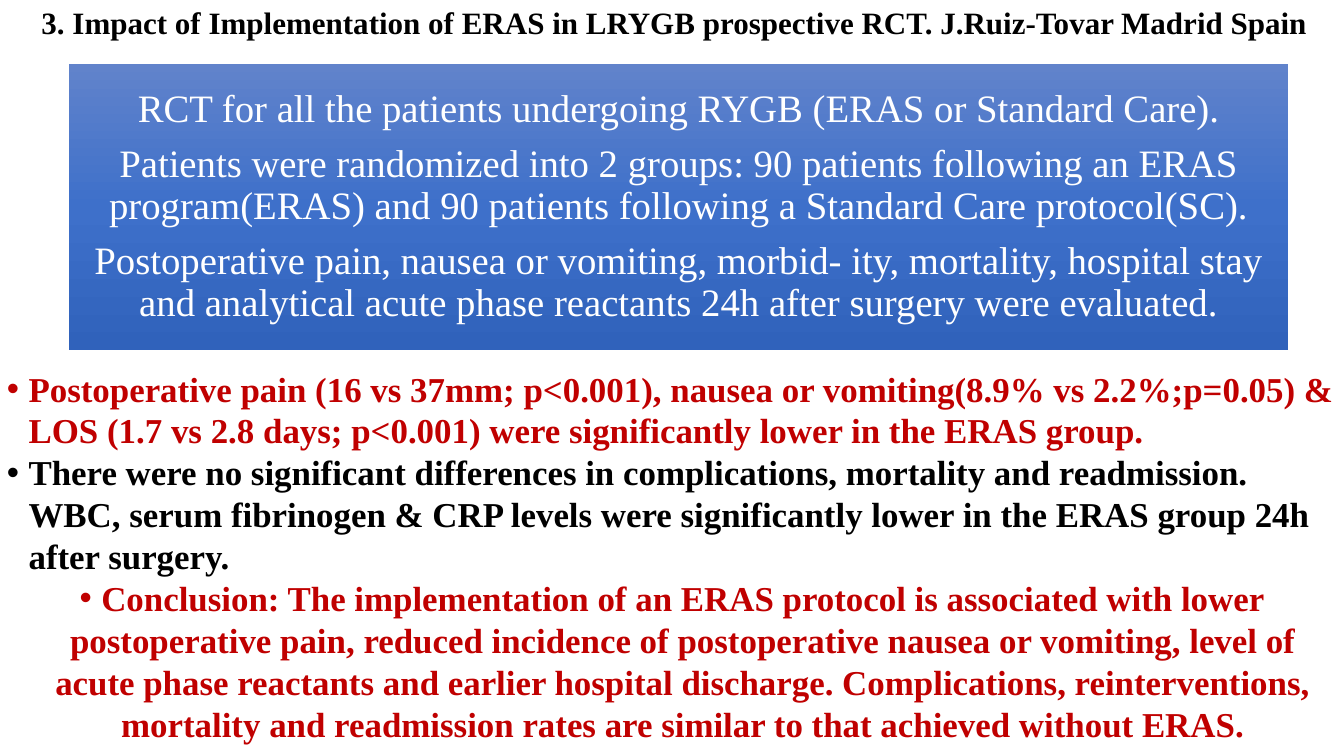
from copy import deepcopy
from dataclasses import dataclass, field
from typing import Any

from pptx import Presentation
from pptx.dml.color import RGBColor
from pptx.enum.shapes import MSO_SHAPE
from pptx.enum.text import MSO_ANCHOR, MSO_AUTO_SIZE, PP_ALIGN
from pptx.oxml.ns import qn
from pptx.util import Pt

EMU_PER_PX = 9144


@dataclass(frozen=True)
class Theme:
    font: str = "Times New Roman"
    white: str = "FFFFFF"
    black: str = "000000"
    red: str = "C00000"
    gradient: tuple[tuple[float, str], ...] = (
        (0, "6183CB"),
        (0.5, "3E70CA"),
        (1, "3062BB"),
    )
    title_size: int = 32
    panel_size: int = 40
    findings_size: int = 36


THEME = Theme()


@dataclass(frozen=True)
class Line:
    text: str
    color: str
    align: PP_ALIGN = PP_ALIGN.CENTER


@dataclass(frozen=True)
class Block:
    bounds: tuple[int, int, int, int]
    size: int
    lines: tuple[Line, ...]
    bold: bool = True
    hanging: int = 0
    frame_format: dict[str, Any] = field(default_factory=dict)
    para_format: dict[str, Any] = field(default_factory=dict)


def px(length: int) -> int:
    return length * EMU_PER_PX


def apply_format(target: Any, values: dict[str, Any]) -> None:
    for name, value in values.items():
        setattr(target, name, value)


def write_block(box: Any, block: Block) -> None:
    sides = ("left", "top", "width", "height")
    apply_format(box, dict(zip(sides, map(px, block.bounds))))
    frame = box.text_frame
    apply_format(frame, {"word_wrap": True, "auto_size": MSO_AUTO_SIZE.NONE} | block.frame_format)
    for index, line in enumerate(block.lines):
        para = frame.add_paragraph() if index else frame.paragraphs[0]
        spacing = {"alignment": line.align, "space_before": Pt(0), "line_spacing": 1.0}
        apply_format(para, spacing | block.para_format)
        if block.hanging:
            properties = para._p.get_or_add_pPr()
            properties.set("marL", str(px(block.hanging)))
            properties.set("indent", str(-px(block.hanging)))
        span = para.add_run()
        span.text = line.text
        apply_format(span.font, {"name": THEME.font, "size": Pt(block.size), "bold": block.bold})
        span.font.color.rgb = RGBColor.from_string(line.color)


def paint_gradient(shape: Any, colors: tuple[tuple[float, str], ...]) -> None:
    shape.fill.gradient()
    shape.fill.gradient_angle = 270
    stop_list = shape._element.spPr.find(f".//{qn('a:gsLst')}")
    while len(stop_list) < len(colors):
        stop_list.append(deepcopy(stop_list[0]))
    for stop, (position, color) in zip(shape.fill.gradient_stops, colors):
        stop.position = position
        stop.color.rgb = RGBColor.from_string(color)


TITLE = Block(
    bounds=(29, 0, 1876, 64),
    size=THEME.title_size,
    lines=(
        Line(
            "3. Impact of Implementation of ERAS in LRYGB prospective RCT. J.Ruiz-Tovar Madrid Spain",
            THEME.black,
        ),
    ),
    frame_format={"word_wrap": False, "vertical_anchor": MSO_ANCHOR.TOP},
)

PANEL = Block(
    bounds=(99, 91, 1747, 411),
    size=THEME.panel_size,
    bold=False,
    lines=tuple(
        Line(text, THEME.white)
        for text in (
            "RCT for all the patients undergoing RYGB (ERAS or Standard Care).",
            "Patients were randomized into 2 groups: 90 patients following an ERAS program(ERAS) "
            "and 90 patients following a Standard Care protocol(SC).",
            "Postoperative pain, nausea or vomiting, morbid- ity, mortality, hospital stay and "
            "analytical acute phase reactants 24h after surgery were evaluated.",
        )
    ),
    frame_format={
        "vertical_anchor": MSO_ANCHOR.MIDDLE,
        "margin_left": px(3),
        "margin_top": px(3),
        "margin_right": px(3),
        "margin_bottom": px(3),
    },
    para_format={"line_spacing": 0.9, "space_after": Pt(14)},
)

FINDINGS = Block(
    bounds=(0, 521, 1926, 555),
    size=THEME.findings_size,
    hanging=31,
    lines=(
        Line(
            "Postoperative pain (16 vs 37mm; p<0.001), nausea or vomiting(8.9% vs 2.2%;p=0.05) & "
            "LOS (1.7 vs 2.8 days; p<0.001) were significantly lower in the ERAS group.",
            THEME.red,
            PP_ALIGN.LEFT,
        ),
        Line(
            "There were no significant differences in complications, mortality and readmission. "
            "WBC, serum fibrinogen & CRP levels were significantly lower in the ERAS group 24h "
            "after surgery.",
            THEME.black,
            PP_ALIGN.LEFT,
        ),
        Line(
            "Conclusion: The implementation of an ERAS protocol is associated with lower "
            "postoperative pain, reduced incidence of postoperative nausea or vomiting, level of "
            "acute phase reactants and earlier hospital discharge. Complications, reinterventions, "
            "mortality and readmission rates are similar to that achieved without ERAS.",
            THEME.red,
        ),
    ),
    frame_format={"vertical_anchor": MSO_ANCHOR.TOP},
)


def main() -> None:
    deck = Presentation()
    apply_format(deck, {"slide_width": px(1926), "slide_height": px(1083)})
    page = deck.slides.add_slide(deck.slide_layouts[1])
    panel = page.shapes.add_shape(MSO_SHAPE.RECTANGLE, *map(px, PANEL.bounds))
    panel.shadow.inherit = False
    panel.line.fill.background()
    paint_gradient(panel, THEME.gradient)
    write_block(panel, PANEL)
    write_block(page.placeholders[1], FINDINGS)
    write_block(page.shapes.title, TITLE)
    deck.save("out.pptx")


if __name__ == "__main__":
    main()
